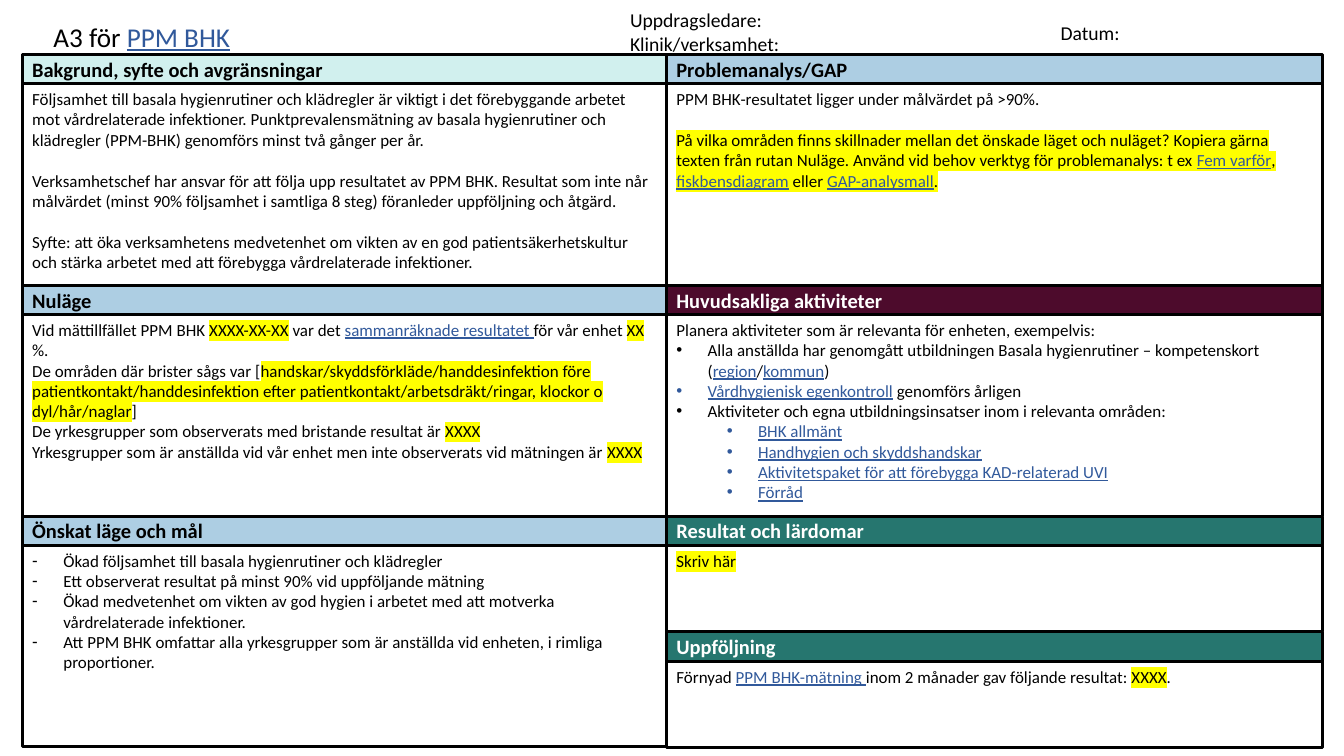
from lxml.etree import SubElement
from pptx import Presentation
from pptx.dml.color import RGBColor
from pptx.enum.shapes import MSO_SHAPE
from pptx.enum.text import MSO_ANCHOR, PP_ALIGN
from pptx.oxml.ns import qn
from pptx.util import Inches, Pt

BLACK = RGBColor(0x00, 0x00, 0x00)
WHITE = RGBColor(0xFF, 0xFF, 0xFF)
LINK = RGBColor(0x31, 0x59, 0x9B)
YELLOW = RGBColor(0xFF, 0xFF, 0x00)
MINT = RGBColor(0xD1, 0xF0, 0xEE)
BLUE = RGBColor(0xAD, 0xCE, 0xE3)
WINE = RGBColor(0x4D, 0x0B, 0x2C)
TEAL = RGBColor(0x26, 0x76, 0x6F)

LEFT, RIGHT = (0.22, 6.39), (6.61, 6.51)
TOP, STEP, HEAD, BODY, SHORT = 0.54, 2.29, 0.29, 2.0, 0.86
GAP = "¶"
MARKS = {"#": (False, True), "_": (True, False), "^": (True, True)}


def write(frame, lines, size, color=BLACK, bold=False):
    frame.word_wrap = True
    for i, line in enumerate(lines):
        para = frame.paragraphs[0] if i == 0 else frame.add_paragraph()
        para.alignment = PP_ALIGN.LEFT
        para.space_before = Pt(0)
        if line.startswith(GAP):
            para.space_before = Pt(14.7)
            line = line[1:]
        text = line.lstrip("•-")
        depth = len(line) - len(text)
        if depth:
            para.level = depth - 1
            props = para._p.get_or_add_pPr()
            props.set("marL", str(Inches(0.31 + 0.5 * (depth - 1))))
            props.set("indent", str(Inches(-0.31)))
            SubElement(props, qn("a:buFont"), typeface="Arial")
            SubElement(props, qn("a:buChar"), char=line[0])
        para.font.name = "Calibri"
        para.font.size = Pt(size)
        para.font.bold = bold
        for part in text.split("|"):
            link, marked = MARKS.get(part[0], (False, False))
            run = para.add_run()
            run.text = part[1:] if link or marked else part
            run.font.color.rgb = LINK if link else color
            if link:
                run.font.underline = True
            if marked:
                glow = SubElement(run.font._element, qn("a:highlight"))
                SubElement(glow, qn("a:srgbClr"), val=str(YELLOW))


def add_box(slide, col, top, height, fill=None):
    left, width = col
    box = slide.shapes.add_shape(
        MSO_SHAPE.RECTANGLE, Inches(left), Inches(top), Inches(width), Inches(height))
    box.shadow.inherit = False
    if fill is None:
        box.fill.background()
    else:
        box.fill.solid()
        box.fill.fore_color.rgb = fill
    box.line.color.rgb = BLACK
    box.line.width = Pt(2)
    box.text_frame.vertical_anchor = MSO_ANCHOR.TOP if fill is None else MSO_ANCHOR.MIDDLE
    return box.text_frame


deck = Presentation()
deck.slide_width, deck.slide_height = Inches(13.33), Inches(7.5)
slide = deck.slides.add_slide(deck.slide_layouts[5])

title = slide.shapes.title
title.left, title.top = Inches(0.43), Inches(0.15)
title.width, title.height = Inches(6.24), Inches(0.43)
title.text_frame.vertical_anchor = MSO_ANCHOR.TOP
write(title.text_frame, ["A3 för |_PPM BHK"], 19.4)

facts = [
    (6.15, 0.03, 3.75, 0.57, ["Uppdragsledare:", "Klinik/verksamhet:"]),
    (10.42, 0.16, 2.69, 0.34, ["Datum:"]),
]
for left, top, width, height, lines in facts:
    label = slide.shapes.add_textbox(
        Inches(left), Inches(top), Inches(width), Inches(height))
    write(label.text_frame, lines, 14)

panels = [
    (LEFT, TOP, BODY, "Bakgrund, syfte och avgränsningar", MINT, BLACK, [
        "Följsamhet till basala hygienrutiner och klädregler är viktigt i det förebyggande arbetet mot vårdrelaterade infektioner. Punktprevalensmätning av basala hygienrutiner och klädregler (PPM-BHK) genomförs minst två gånger per år.",
        GAP + "Verksamhetschef har ansvar för att följa upp resultatet av PPM BHK. Resultat som inte når målvärdet (minst 90% följsamhet i samtliga 8 steg) föranleder uppföljning och åtgärd.",
        GAP + "Syfte: att öka verksamhetens medvetenhet om vikten av en god patientsäkerhetskultur och stärka arbetet med att förebygga vårdrelaterade infektioner.",
    ]),
    (LEFT, TOP + STEP, BODY, "Nuläge", BLUE, BLACK, [
        "Vid mättillfället PPM BHK |#XXXX-XX-XX| var det |_sammanräknade resultatet |för vår enhet |#XX| %.",
        "De områden där brister sågs var [|#handskar/skyddsförkläde/handdesinfektion före patientkontakt/handdesinfektion efter patientkontakt/arbetsdräkt/ringar, klockor o dyl/hår/naglar|]",
        "De yrkesgrupper som observerats med bristande resultat är |#XXXX",
        "Yrkesgrupper som är anställda vid vår enhet men inte observerats vid mätningen är |#XXXX",
    ]),
    (LEFT, TOP + 2 * STEP, BODY, "Önskat läge och mål", BLUE, BLACK, [
        "-Ökad följsamhet till basala hygienrutiner och klädregler",
        "-Ett observerat resultat på minst 90% vid uppföljande mätning",
        "-Ökad medvetenhet om vikten av god hygien i arbetet med att motverka vårdrelaterade infektioner.",
        "-Att PPM BHK omfattar alla yrkesgrupper som är anställda vid enheten, i rimliga proportioner.",
    ]),
    (RIGHT, TOP, BODY, "Problemanalys/GAP", BLUE, BLACK, [
        "PPM BHK-resultatet ligger under målvärdet på >90%.",
        GAP + "#På vilka områden finns skillnader mellan det önskade läget och nuläget? Kopiera gärna texten från rutan Nuläge. Använd vid behov verktyg för problemanalys: t ex |^Fem varför|#, |^fiskbensdiagram|# eller |^GAP-analysmall|#.",
    ]),
    (RIGHT, TOP + STEP, BODY, "Huvudsakliga aktiviteter", WINE, WHITE, [
        "Planera aktiviteter som är relevanta för enheten, exempelvis:",
        "•Alla anställda har genomgått utbildningen Basala hygienrutiner – kompetenskort (|_region|/|_kommun|)",
        "•_Vårdhygienisk egenkontroll| genomförs årligen",
        "•Aktiviteter och egna utbildningsinsatser inom i relevanta områden:",
        "••_BHK allmänt",
        "••_Handhygien och skyddshandskar",
        "••_Aktivitetspaket för att förebygga KAD-relaterad UVI",
        "••_Förråd",
    ]),
    (RIGHT, TOP + 2 * STEP, SHORT, "Resultat och lärdomar", TEAL, WHITE, ["#Skriv här"]),
    (RIGHT, TOP + 2 * STEP + HEAD + SHORT, SHORT, "Uppföljning", TEAL, WHITE, [
        "Förnyad |_PPM BHK-mätning |inom 2 månader gav följande resultat: |#XXXX|.",
    ]),
]
for col, top, height, name, fill, color, lines in panels:
    write(add_box(slide, col, top + HEAD, height), lines, 12.1)
    write(add_box(slide, col, top, HEAD, fill), [name], 14.6, color, True)

deck.save("out.pptx")
